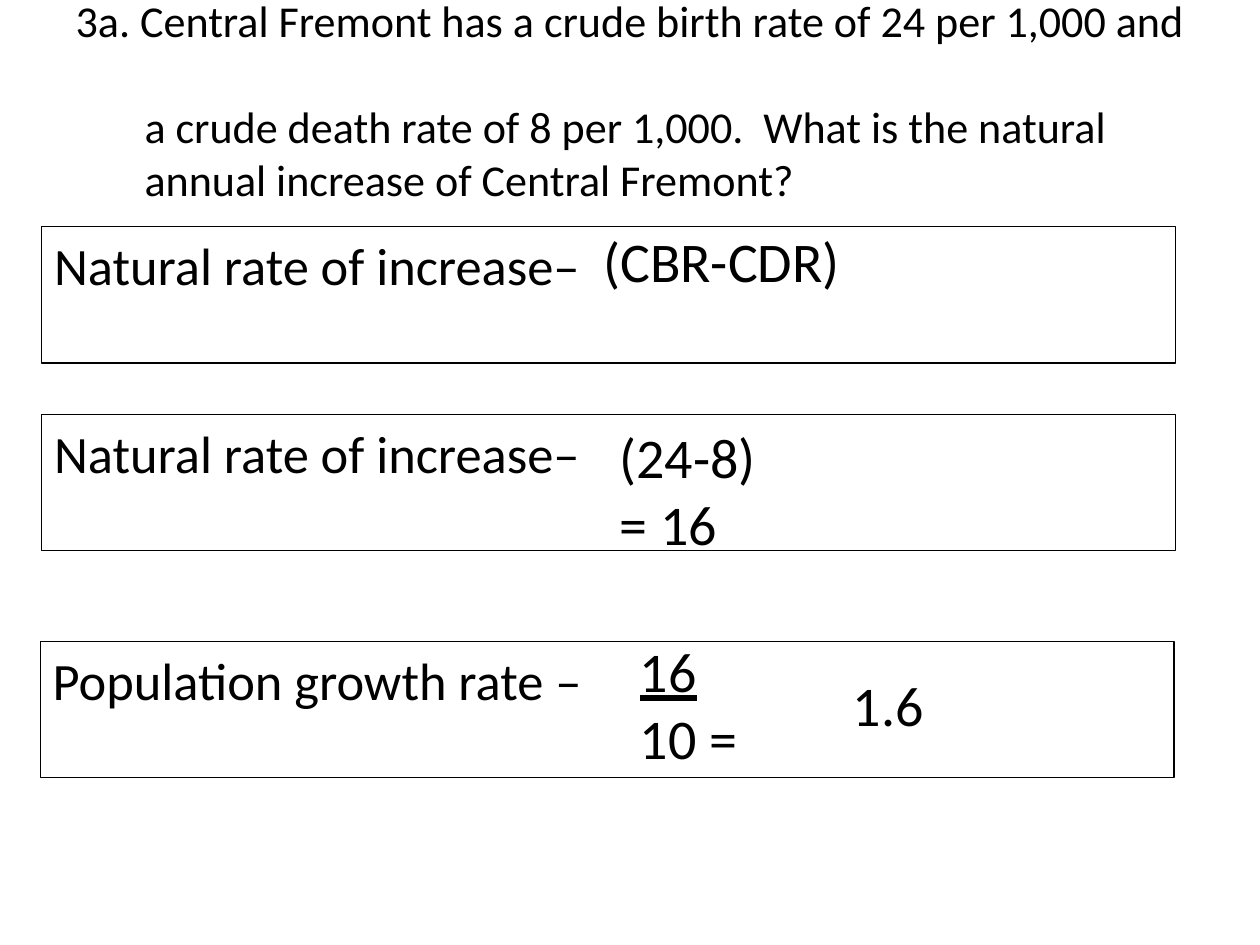
from pptx import Presentation
from pptx.dml.color import RGBColor
from pptx.enum.shapes import MSO_SHAPE as Shape
from pptx.enum.text import MSO_ANCHOR as Anchor, MSO_AUTO_SIZE as Fit, PP_ALIGN as Align
from pptx.util import Pt

BLACK = RGBColor(0, 0, 0)
FONT = "Calibri"


def write(para, text, size, under=False):
    para.alignment = Align.LEFT
    run = para.add_run()
    run.text = text
    run.font.name = FONT
    run.font.size = Pt(size)
    run.font.color.rgb = BLACK
    if under:
        run.font.underline = True


def note(shapes, left, top, width, height, lines):
    box = shapes.add_textbox(Pt(left), Pt(top), Pt(width), Pt(height))
    frame = box.text_frame
    frame.word_wrap = True
    frame.auto_size = Fit.SHAPE_TO_FIT_TEXT
    for i, (text, under) in enumerate(lines):
        para = frame.add_paragraph() if i else frame.paragraphs[0]
        write(para, text, 32, under)


deck = Presentation()
deck.slide_width, deck.slide_height = Pt(720), Pt(540)
slide = deck.slides.add_slide(deck.slide_layouts[5])

title = slide.shapes.title
title.left, title.top, title.width, title.height = Pt(36), Pt(18), Pt(648), Pt(108)
frame = title.text_frame
frame.word_wrap = True
frame.auto_size = Fit.NONE
frame.vertical_anchor = Anchor.MIDDLE
frame.margin_bottom = Pt(34)
write(frame.paragraphs[0], "3a. Central Fremont has a crude birth rate of 24 per 1,000 and", 25.2)
rest = frame.add_paragraph()
rest.space_before = Pt(30.3)
rest._p.get_or_add_pPr().set("marL", str(Pt(39.4)))
write(rest, "a crude death rate of 8 per 1,000.  What is the natural annual increase of Central Fremont?", 25.2)

steps = [
    (23.8, 129.6, "Natural rate of increase–", (337.7, 126, 180, 46), [("(CBR-CDR)", False)]),
    (23.8, 236.9, "Natural rate of increase–", (347, 237.6, 103, 85), [("(24-8) = 16", False)]),
    (23, 366.5, "Population growth rate –", (358.6, 360, 103, 85), [("16", True), ("10 =", False)]),
]
for left, top, label, place, lines in steps:
    group = slide.shapes.add_group_shape()
    rect = group.shapes.add_shape(Shape.RECTANGLE, Pt(left), Pt(top), Pt(648), Pt(77.8))
    rect.shadow.inherit = False
    rect.fill.background()
    rect.line.color.rgb = BLACK
    rect.line.width = Pt(0.75)
    rect.text_frame.word_wrap = True
    rect.text_frame.vertical_anchor = Anchor.TOP
    write(rect.text_frame.paragraphs[0], label, 30)
    note(group.shapes, *place, lines)

note(slide.shapes, 480.2, 379.4, 103, 46, [("1.6", False)])

deck.save("out.pptx")
